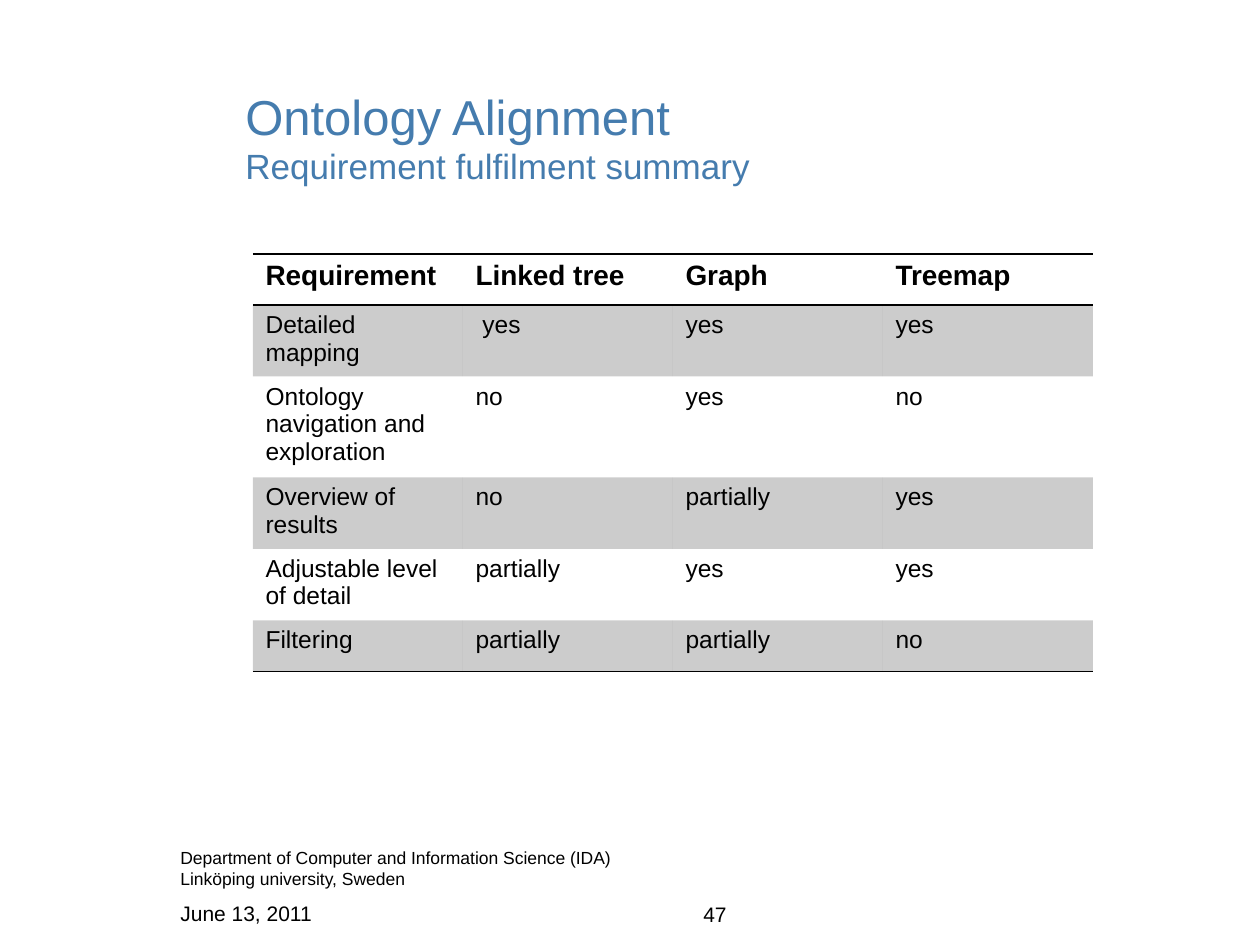
from lxml import etree
from pptx import Presentation
from pptx import util as u
from pptx.dml.color import RGBColor
from pptx.enum import text
from pptx.oxml import ns

BLUE = RGBColor(0x45, 0x7C, 0xAE)
BLACK = RGBColor(0, 0, 0)
PLAIN = "{2D5ABB26-0587-4C30-8999-92F81FD0307C}"
ROWS = [
    ["Requirement", "Linked tree", "Graph", "Treemap"],
    ["Detailed mapping", " yes", "yes", "yes"],
    ["Ontology navigation and exploration", "no", "yes", "no"],
    ["Overview of results", "no", "partially", "yes"],
    ["Adjustable level of detail", "partially", "yes", "yes"],
    ["Filtering", "partially", "partially", "no"],
]


def px(n):
    return u.Emu(round(n * 914400 / 126))


def style(font, size, color=BLACK, bold=False):
    form = {"name": "Arial", "size": u.Pt(size), "bold": bold}
    for key, val in form.items():
        setattr(font, key, val)
    font.color.rgb = color


def add_box(slide, area, lines, color=BLACK, **form):
    frame = slide.shapes.add_textbox(*map(px, area)).text_frame
    frame.word_wrap = True
    for key, val in form.items():
        setattr(frame, key, val)
    para = frame.paragraphs[0]
    for i, (words, size) in enumerate(lines):
        if i:
            para.add_line_break()
        run = para.add_run()
        run.text = words
        style(run.font, size, color)
    return para


def add_rule(cell, side):
    line = etree.Element(ns.qn("a:ln" + side), w=str(u.Pt(1)))
    fill = etree.SubElement(line, ns.qn("a:solidFill"))
    etree.SubElement(fill, ns.qn("a:srgbClr"), val=str(BLACK))
    props = cell._tc.get_or_add_tcPr()
    props.insert(len(props.findall(ns.qn("a:lnT"))), line)


def shade(cell):
    cell.fill.solid()
    cell.fill.fore_color.rgb = BLACK
    tint = cell._tc.tcPr.find(".//" + ns.qn("a:srgbClr"))
    etree.SubElement(tint, ns.qn("a:alpha"), val="20000")


def fill_cell(cell, words, row):
    cell.text = words
    head = row == 0
    style(cell.text_frame.paragraphs[0].runs[0].font, 16 if head else 14, bold=head)
    if row % 2:
        shade(cell)
    else:
        cell.fill.background()
    if head:
        add_rule(cell, "T")
    if row in (0, len(ROWS) - 1):
        add_rule(cell, "B")


def add_grid(slide):
    area = map(px, (253, 254, 840, 51 * len(ROWS)))
    table = slide.shapes.add_table(len(ROWS), len(ROWS[0]), *area).table
    table.first_row = table.horz_banding = False
    table._tbl.tblPr.find(ns.qn("a:tableStyleId")).text = PLAIN
    for r, row in enumerate(ROWS):
        for c, words in enumerate(row):
            fill_cell(table.cell(r, c), words, r)


def main():
    prs = Presentation()
    prs.slide_width, prs.slide_height = px(1260), px(945)
    slide = prs.slides.add_slide(prs.slide_layouts[6])
    title = [("Ontology Alignment", 28), ("Requirement fulfilment summary", 20)]
    add_box(slide, (233, 76, 964, 157), title, BLUE, margin_top=px(10))
    low = {"vertical_anchor": text.MSO_ANCHOR.BOTTOM}
    add_box(slide, (168, 869, 220, 63), [("June 13, 2011", 12)], **low)
    page = add_box(slide, (630, 870, 170, 63), [("47", 12)], **low)
    page.alignment = text.PP_ALIGN.CENTER
    dept = "Department of Computer and Information Science (IDA) Linköping university, Sweden"
    add_box(slide, (168, 832, 494, 63), [(dept, 10)], **low)
    add_grid(slide)
    prs.save("out.pptx")


if __name__ == "__main__":
    main()
